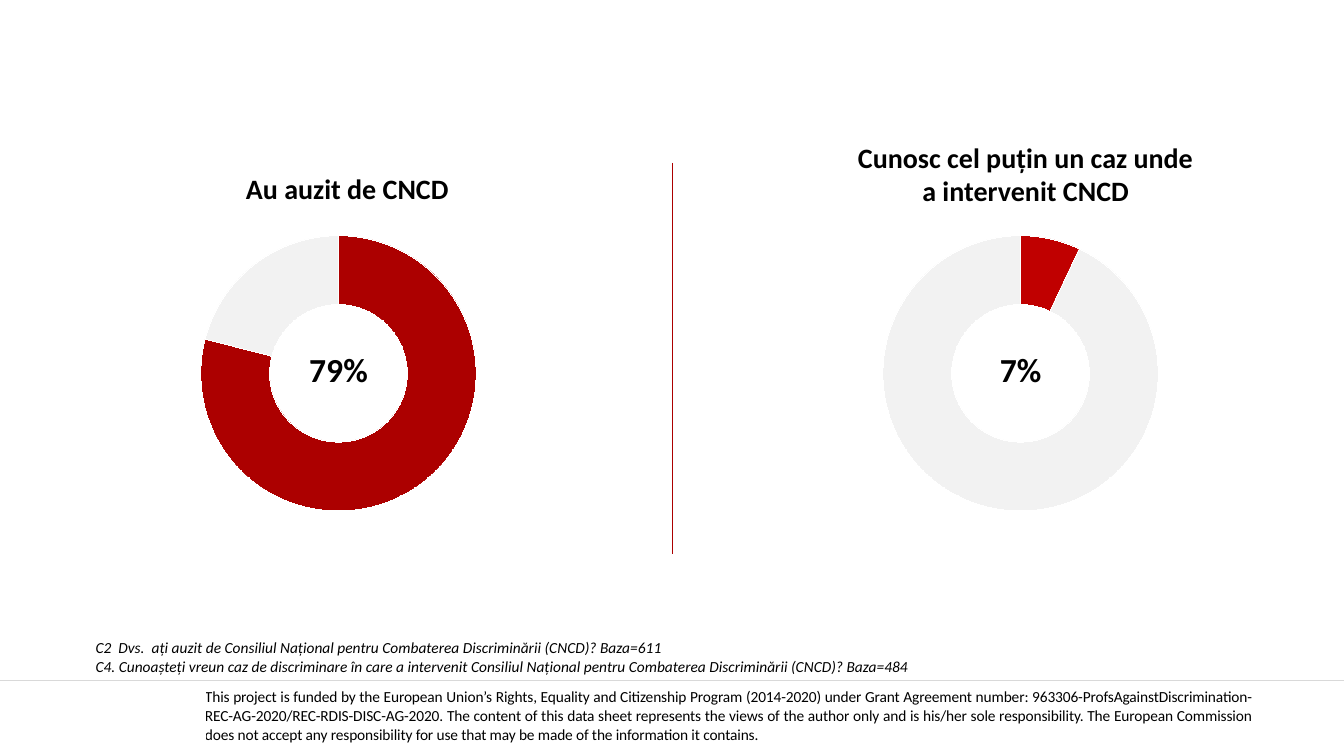
from lxml.etree import SubElement
from pptx import Presentation
from pptx.chart.data import CategoryChartData
from pptx.dml.color import RGBColor
from pptx.enum.chart import XL_CHART_TYPE as ChartType
from pptx.enum.shapes import MSO_CONNECTOR as Connector
from pptx.enum.text import MSO_ANCHOR as Anchor, MSO_AUTO_SIZE as AutoSize, PP_ALIGN as Align
from pptx.oxml.ns import qn
from pptx.util import Inches, Pt

BLACK = RGBColor(0x00, 0x00, 0x00)
WHITE = RGBColor(0xFF, 0xFF, 0xFF)
DARK_RED = RGBColor(0xAC, 0x00, 0x00)
RED = RGBColor(0xC0, 0x00, 0x00)
PALE_GREY = RGBColor(0xF2, 0xF2, 0xF2)
RULE_GREY = RGBColor(0xD9, 0xD9, 0xD9)

FONT = "Calibri"
SLIDE_WIDTH, SLIDE_HEIGHT = Inches(13.33), Inches(7.5)
COLUMNS, ROWS = 160, 90
RING_TOP, RING_WIDTH, RING_HEIGHT = 26.4, 52, 36.1

FUNDING = (
    "This project is funded by the European Union’s Rights, Equality and Citizenship Program "
    "(2014-2020) under Grant Agreement number: 963306-ProfsAgainstDiscrimination-REC-AG-2020/"
    "REC-RDIS-DISC-AG-2020. The content of this data sheet represents the views of the author "
    "only and is his/her sole responsibility. The European Commission does not accept any "
    "responsibility for use that may be made of the information it contains."
)
QUESTIONS = [
    "C2  Dvs.  ați auzit de Consiliul Național pentru Combaterea Discriminării (CNCD)? Baza=611",
    "C4. Cunoașteți vreun caz de discriminare în care a intervenit Consiliul Național pentru "
    "Combaterea Discriminării (CNCD)? Baza=484",
]


def grid(column, row, width, height):
    """Turn grid columns and rows into left, top, width and height."""
    across, down = SLIDE_WIDTH / COLUMNS, SLIDE_HEIGHT / ROWS
    return [int(n) for n in (column * across, row * down, width * across, height * down)]


def style(font, size, bold=False, italic=False):
    """Set the black slide font at the given size."""
    font.name, font.size = FONT, Pt(size)
    font.bold, font.italic = bold, italic
    font.color.rgb = BLACK


def add_text(slide, area, lines, size, align=Align.LEFT, wrap=True, **emphasis):
    """Add a text box with one paragraph per line."""
    frame = slide.shapes.add_textbox(*grid(*area)).text_frame
    frame.word_wrap = wrap
    frame.auto_size = AutoSize.SHAPE_TO_FIT_TEXT
    frame.text = "\n".join(lines)
    for paragraph in frame.paragraphs:
        paragraph.alignment = align
        style(paragraph.font, size, **emphasis)


def add_rule(slide, column, row, width, height, color):
    """Add a thin straight line without a shadow."""
    left, top, across, down = grid(column, row, width, height)
    rule = slide.shapes.add_connector(Connector.STRAIGHT, left, top, left + across, top + down)
    rule.line.color.rgb = color
    rule.line.width = Pt(0.5)
    SubElement(rule._element.spPr, qn("a:effectLst"))


def add_ring(slide, column, share, color, label_width):
    """Add a doughnut of one share against the rest, with its percentage in the middle."""
    shares = CategoryChartData()
    shares.categories = ["1", "2"]
    shares.add_series("Series 1", (share, 100 - share))
    area = grid(column, RING_TOP, RING_WIDTH, RING_HEIGHT)
    chart = slide.shapes.add_chart(ChartType.DOUGHNUT, *area, shares).chart
    chart.has_legend = chart.has_title = False
    style(chart.font, 10)
    plot = chart.plots[0]
    plot.vary_by_categories = True
    plot._element.find(qn("c:holeSize")).set("val", "56")
    for index, fill_color in enumerate((color, PALE_GREY)):
        part = plot.series[0].points[index].format
        part.fill.solid()
        part.fill.fore_color.rgb = fill_color
        part.line.color.rgb = WHITE
    label_column = column + (RING_WIDTH - label_width) / 2
    add_text(slide, (label_column, 40.9, label_width, 6), [f"{share}%"], 24,
             align=Align.CENTER, wrap=False, bold=True)


def add_funding_note(slide):
    """Add the justified funding statement as a one-cell table."""
    table = slide.shapes.add_table(1, 1, *grid(24.4, 79, 124.7, 12.5)).table
    table.first_row = table.horz_banding = False
    cell = table.cell(0, 0)
    cell.fill.background()
    cell.vertical_anchor = Anchor.MIDDLE
    cell.margin_left = cell.margin_right = cell.margin_top = cell.margin_bottom = 0
    cell.text = FUNDING
    statement = cell.text_frame.paragraphs[0]
    statement.alignment = Align.JUSTIFY
    style(statement.font, 11)
    statement.runs[0].font._element.set("spc", "-10")


def main():
    """Build the slide and save it."""
    deck = Presentation()
    deck.slide_width, deck.slide_height = SLIDE_WIDTH, SLIDE_HEIGHT
    slide = deck.slides.add_slide(deck.slide_layouts[6])

    add_funding_note(slide)
    add_rule(slide, COLUMNS / 2, 19.4, 0, 46.5, DARK_RED)
    add_ring(slide, 14.3, 79, DARK_RED, 9.5)
    add_text(slide, (28.1, 19.8, 26.8, 5.3), ["Au auzit de CNCD"], 20, bold=True)
    add_ring(slide, 95.5, 7, RED, 7.4)
    add_text(slide, (90.5, 16.1, 63.2, 9.2),
             ["Cunosc cel puțin un caz unde", "a intervenit CNCD"], 20,
             align=Align.CENTER, bold=True)
    add_rule(slide, 0, 81, COLUMNS, 0, RULE_GREY)
    add_text(slide, (10.2, 75.4, 149.2, 5.6), QUESTIONS, 11, italic=True)

    deck.save("out.pptx")


if __name__ == "__main__":
    main()
